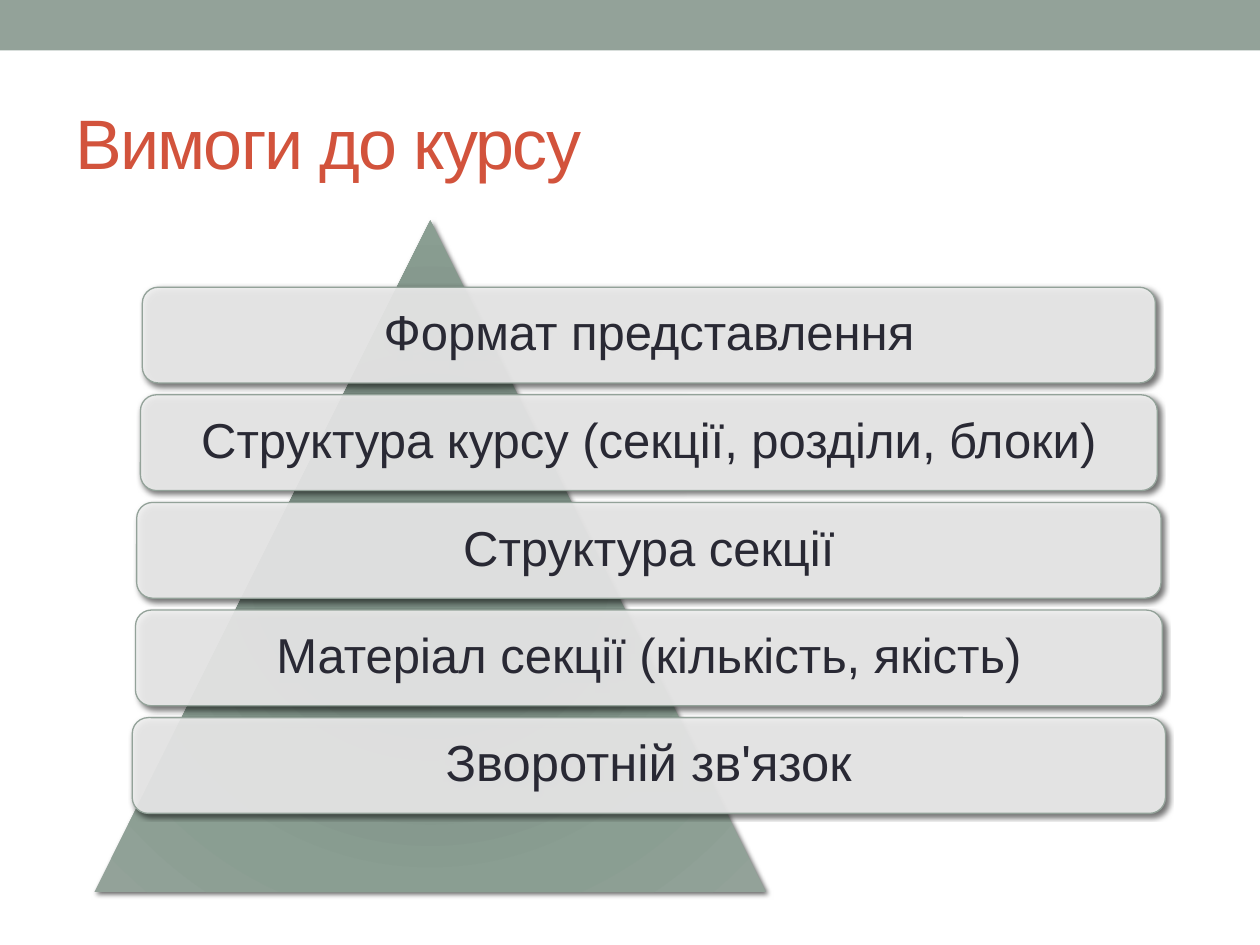
"""Build a slide on course requirements: a pyramid behind five labelled bars."""
from lxml import etree
from pptx import Presentation
from pptx.dml.color import RGBColor
from pptx.enum import shapes, text
from pptx.oxml import parse_xml
from pptx.oxml.ns import nsdecls, qn
from pptx.util import Inches, Pt

SAGE = RGBColor(0x93, 0xA2, 0x99)
RED = RGBColor(0xD2, 0x53, 0x3C)
INK = RGBColor(0x29, 0x29, 0x34)
PALE = RGBColor(0xF0, 0xF0, 0xF0)
STOPS = [
    (0, RGBColor(0x7B, 0x8E, 0x82)),
    (34, RGBColor(0x7B, 0x8D, 0x83)),
    (70, RGBColor(0x8A, 0x9E, 0x92)),
    (100, SAGE),
]


def write(sp, txt, size, color, align, inset=(0.1, 0.05), line=1.0, spacing=0):
    tf = sp.text_frame
    tf.word_wrap = True
    tf.vertical_anchor = text.MSO_ANCHOR.MIDDLE
    tf.margin_left = tf.margin_right = Inches(inset[0])
    tf.margin_top = tf.margin_bottom = Inches(inset[1])
    p = tf.paragraphs[0]
    p.alignment = align
    p.line_spacing = line
    r = p.add_run()
    r.text = txt
    r.font.name = "Arial"
    r.font.size = Pt(size)
    r.font.color.rgb = color
    if spacing:
        r._r.get_or_add_rPr().set("spc", str(spacing * 100))


def add_shape(kind, x, y, w, h, shadow=True):
    sp = s.shapes.add_shape(kind, Inches(x), Inches(y), Inches(w), Inches(h))
    sp.line.fill.background()
    sp.shadow.inherit = False
    if shadow:
        effects = sp._element.spPr.find(qn("a:effectLst"))
        effects.append(parse_xml(
            f'<a:outerShdw {nsdecls("a")} blurRad="{Pt(3)}" dist="{Pt(2)}" dir="2700000" '
            'algn="br" rotWithShape="0"><a:srgbClr val="000000"><a:alpha val="60000"/>'
            '</a:srgbClr></a:outerShdw>'))
    return sp


prs = Presentation()
prs.slide_width, prs.slide_height = Inches(10), Inches(7.5)
s = prs.slides.add_slide(prs.slide_layouts[6])

band = add_shape(shapes.MSO_SHAPE.RECTANGLE, 0, 0, 10, 0.4, shadow=False)
band.fill.solid()
band.fill.fore_color.rgb = SAGE

title = s.shapes.add_textbox(Inches(0.5), Inches(0.58), Inches(9), Inches(1.08))
write(title, "Вимоги до курсу", 40, RED, text.PP_ALIGN.LEFT, spacing=-1)

pyramid = add_shape(shapes.MSO_SHAPE.ISOSCELES_TRIANGLE, 0.75, 1.75, 5.33, 5.33)
stops = "".join(
    f'<a:gs pos="{pos * 1000}"><a:srgbClr val="{color}"/></a:gs>' for pos, color in STOPS)
pyramid._element.spPr.find(qn("a:prstGeom")).addnext(parse_xml(
    f'<a:gradFill {nsdecls("a")} rotWithShape="1"><a:gsLst>{stops}</a:gsLst>'
    '<a:path path="circle"><a:fillToRect l="100000" t="100000" r="100000" b="100000"/>'
    '</a:path></a:gradFill>'))

bars = [
    ("Формат представлення", 8.04, 28),
    ("Структура курсу (секції, розділи, блоки)", 8.07, 28),
    ("Структура секції", 8.13, 28),
    ("Матеріал секції (кількість, якість)", 8.15, 28),
    ("Зворотній зв'язок", 8.2, 29),
]
for i, (label, width, size) in enumerate(bars):
    bar = add_shape(shapes.MSO_SHAPE.ROUNDED_RECTANGLE,
                    5.15 - width / 2, 2.28 + i * 0.854, width, 0.76)
    bar.fill.solid()
    bar.fill.fore_color.rgb = PALE
    tint = bar._element.spPr.find(qn("a:solidFill")).find(qn("a:srgbClr"))
    etree.SubElement(tint, qn("a:alpha"), val="90000")
    bar.line.color.rgb = SAGE
    bar.line.width = Pt(0.75)
    write(bar, label, size, INK, text.PP_ALIGN.CENTER, inset=(0.12, 0.12), line=0.9)

prs.save("out.pptx")
